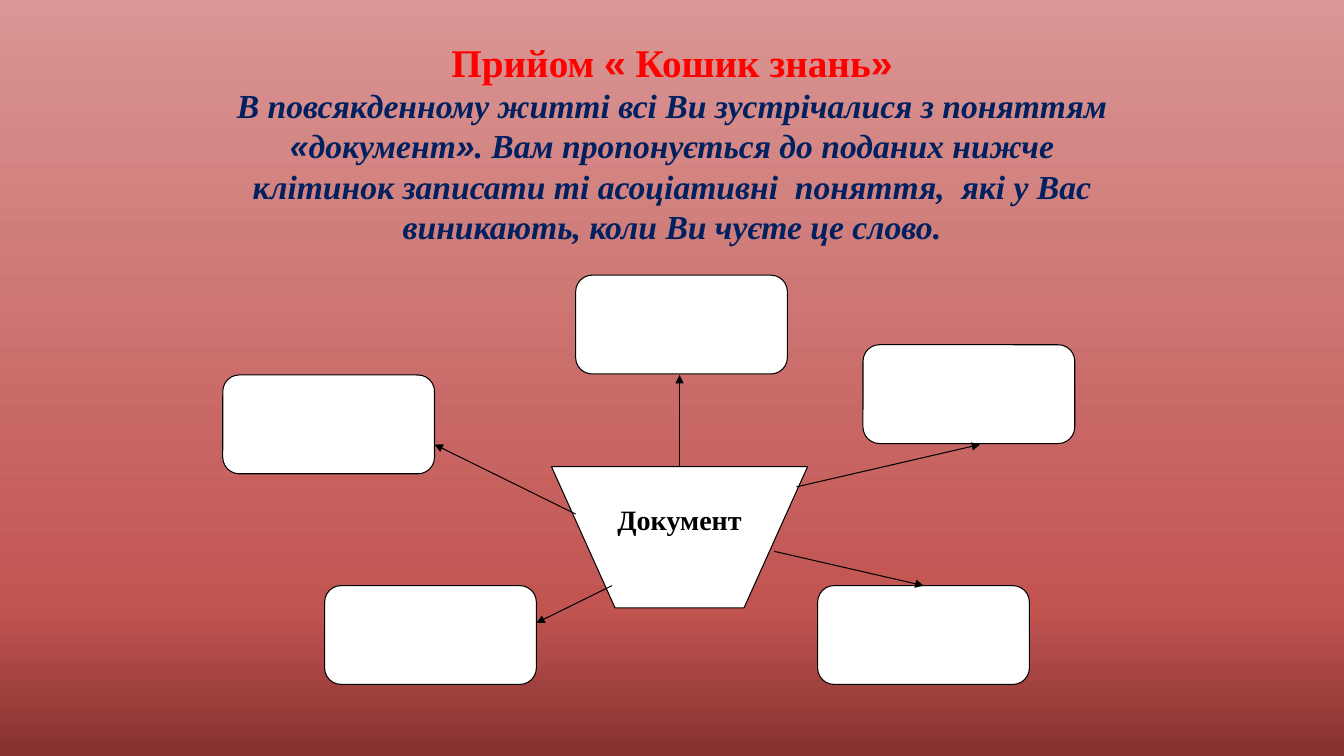
"""Build the "basket of knowledge" slide with its association diagram."""
from copy import deepcopy
from dataclasses import dataclass
from itertools import groupby
from typing import Optional

from pptx import Presentation
from pptx.dml.color import RGBColor
from pptx.enum.shapes import MSO_CONNECTOR, MSO_SHAPE
from pptx.enum.text import MSO_ANCHOR, MSO_AUTO_SIZE, PP_ALIGN
from pptx.oxml.ns import qn
from pptx.util import Emu, Pt
from lxml.etree import SubElement

PX = 9144
TITLE_ONLY = 5
BOX_W, BOX_H = 210, 98


@dataclass(frozen=True)
class Theme:
    background: tuple = ((0, "85312F"), (0.2, "C25552"), (1, "D99694"))
    heading: str = "FF0000"
    body: str = "002060"
    ink: str = "000000"
    paper: str = "FFFFFF"
    font: str = "Times New Roman"
    quote_font: str = "Arial"
    heading_size: int = 28
    body_size: int = 24
    label_size: int = 20
    line_width: float = 0.75


@dataclass(frozen=True)
class Box:
    x: int
    y: int


@dataclass(frozen=True)
class Arrow:
    start: tuple[int, int]
    end: tuple[int, int]
    box: Optional[str] = None
    side: int = 0


THEME = Theme()
BOXES = {
    "top": Box(571, 273),
    "lower right": Box(811, 581),
    "lower left": Box(322, 581),
    "upper right": Box(856, 342),
    "upper left": Box(221, 372),
}
ARROWS = (
    Arrow((674, 463), (674, 372)),
    Arrow((790, 483), (972, 441)),
    Arrow((571, 510), (431, 441)),
    Arrow((607, 581), (532, 618)),
    Arrow((768, 547), (916, 581), "lower right", 0),
)
BASKET = ((547, 463), (610, 603), (738, 603), (801, 463))


def px(*values: int) -> list[Emu]:
    return [Emu(v * PX) for v in values]


def write(p, text: str, *, size: int, color: str, italic: bool = False) -> None:
    p.alignment = PP_ALIGN.CENTER
    for is_quote, chars in groupby(text, key=lambda c: c in "«»"):
        r = p.add_run()
        r.text = "".join(chars)
        r.font.name = THEME.quote_font if is_quote else THEME.font
        r.font.size = Pt(size)
        r.font.bold = True
        r.font.italic = italic
        r.font.color.rgb = RGBColor.from_string(color)


def paint_background(s) -> None:
    fill = s.background.fill
    fill.gradient()
    fill.gradient_angle = 90
    stops = s.element.find(".//" + qn("a:gsLst"))
    stops.append(deepcopy(stops[0]))
    for stop, (position, color) in zip(fill.gradient_stops, THEME.background):
        stop.position = position
        stop.color.rgb = RGBColor.from_string(color)


def add_title(s) -> None:
    sp = s.shapes.title
    sp.left, sp.top, sp.width, sp.height = px(221, 32, 891, 218)
    tf = sp.text_frame
    tf.word_wrap = True
    tf.auto_size = MSO_AUTO_SIZE.NONE
    tf.vertical_anchor = MSO_ANCHOR.MIDDLE
    write(tf.paragraphs[0], "Прийом « Кошик знань»",
          size=THEME.heading_size, color=THEME.heading)
    write(tf.add_paragraph(),
          "В повсякденному житті всі Ви зустрічалися з поняттям «документ». "
          "Вам пропонується до поданих нижче клітинок записати ті асоціативні  "
          "поняття,  які у Вас виникають, коли Ви чуєте це слово.",
          size=THEME.body_size, color=THEME.body, italic=True)


def style_line(line) -> None:
    line.color.rgb = RGBColor.from_string(THEME.ink)
    line.width = Pt(THEME.line_width)


def style_shape(sp) -> None:
    sp.shadow.inherit = False
    sp.fill.solid()
    sp.fill.fore_color.rgb = RGBColor.from_string(THEME.paper)
    style_line(sp.line)


def add_basket(s) -> None:
    builder = s.shapes.build_freeform(*BASKET[0], scale=PX)
    builder.add_line_segments(BASKET[1:], close=True)
    sp = builder.convert_to_shape()
    style_shape(sp)
    tf = sp.text_frame
    tf.vertical_anchor = MSO_ANCHOR.TOP
    tf.margin_top = Emu(36 * PX)
    write(tf.paragraphs[0], "Документ", size=THEME.label_size, color=THEME.ink)


def add_box(s, box: Box):
    sp = s.shapes.add_shape(MSO_SHAPE.ROUNDED_RECTANGLE,
                            *px(box.x, box.y, BOX_W, BOX_H))
    style_shape(sp)
    return sp


def add_arrow(s, arrow: Arrow, boxes: dict) -> None:
    cxn = s.shapes.add_connector(MSO_CONNECTOR.STRAIGHT,
                                 *px(*arrow.start, *arrow.end))
    if arrow.box:
        cxn.end_connect(boxes[arrow.box], arrow.side)
    style_line(cxn.line)
    sp_pr = cxn.element.spPr
    SubElement(sp_pr.find(qn("a:ln")), qn("a:tailEnd"), type="triangle")
    SubElement(sp_pr, qn("a:effectLst"))


def main() -> None:
    prs = Presentation()
    prs.slide_width, prs.slide_height = px(1333, 750)
    s = prs.slides.add_slide(prs.slide_layouts[TITLE_ONLY])
    paint_background(s)
    add_title(s)
    add_basket(s)
    boxes = {name: add_box(s, box) for name, box in BOXES.items()}
    for arrow in ARROWS:
        add_arrow(s, arrow, boxes)
    prs.save("out.pptx")


if __name__ == "__main__":
    main()
